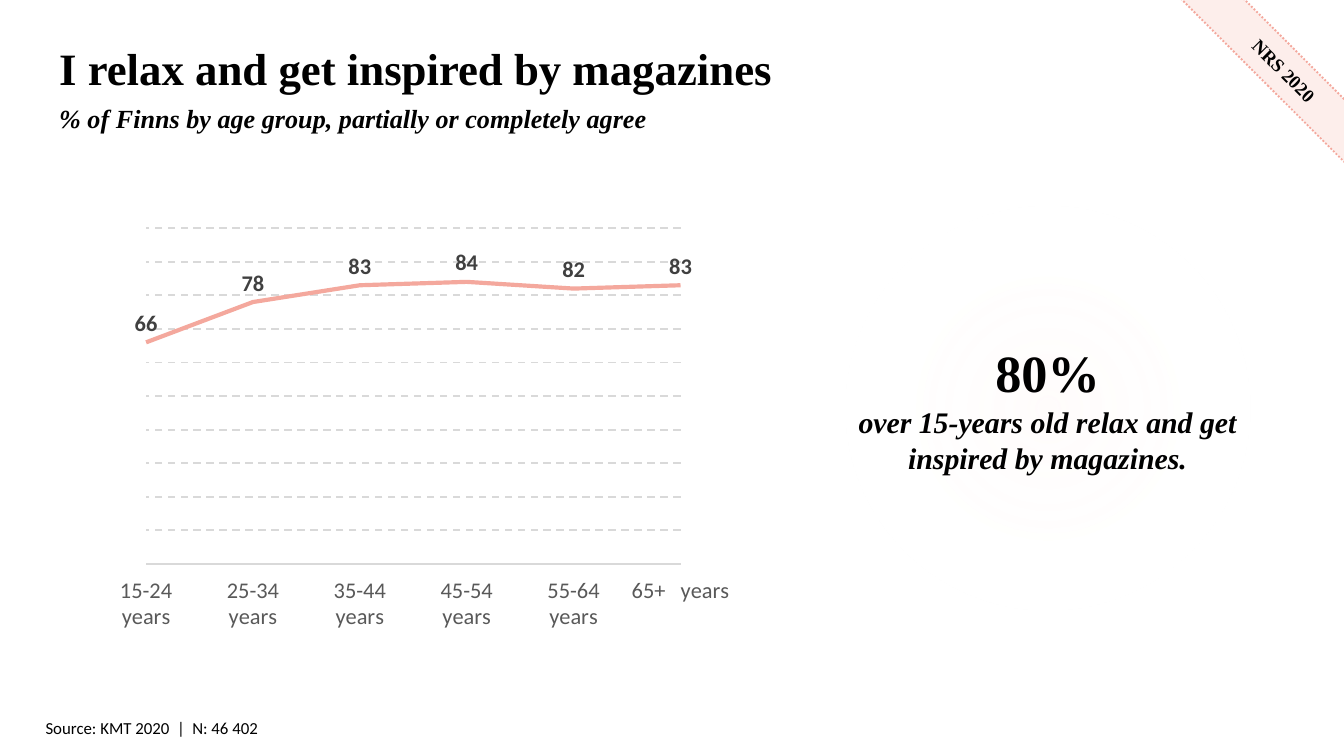
from dataclasses import dataclass

from lxml import etree
from pptx import Presentation
from pptx.chart.data import CategoryChartData
from pptx.dml.color import RGBColor
from pptx.enum.chart import XL_CHART_TYPE, XL_LABEL_POSITION, XL_TICK_LABEL_POSITION, XL_TICK_MARK
from pptx.enum.dml import MSO_LINE
from pptx.enum.shapes import MSO_SHAPE
from pptx.enum.text import MSO_ANCHOR, MSO_AUTO_SIZE, PP_ALIGN
from pptx.oxml import parse_xml
from pptx.oxml.ns import nsdecls, qn
from pptx.util import Inches, Pt

LINE_CHART = XL_CHART_TYPE.LINE
ABOVE = XL_LABEL_POSITION.ABOVE
LOW = XL_TICK_LABEL_POSITION.LOW
NO_TICK = XL_TICK_MARK.NONE
DASH, DOTTED = MSO_LINE.DASH, MSO_LINE.ROUND_DOT
RECTANGLE = MSO_SHAPE.RECTANGLE
TOP, MIDDLE = MSO_ANCHOR.TOP, MSO_ANCHOR.MIDDLE
LEFT, CENTER = PP_ALIGN.LEFT, PP_ALIGN.CENTER
FIXED_SIZE = MSO_AUTO_SIZE.NONE


@dataclass(frozen=True)
class Theme:
    serif: str = "Times New Roman"
    sans: str = "Calibri"
    text: str = "000000"
    accent: str = "F4A89D"
    ribbon: str = "FDEEEB"
    glow: str = "FEF6F4"
    white: str = "FFFFFF"
    grid: str = "D9D9D9"
    axis_text: str = "595959"
    label_text: str = "404040"
    title_size: int = 24
    subtitle_size: int = 14
    figure_size: int = 28
    statement_size: int = 16
    chart_size: int = 10
    label_size: int = 12
    ribbon_size: int = 10
    source_size: int = 9


@dataclass(frozen=True)
class Box:
    left: float
    top: float
    width: float
    height: float

    def lengths(self):
        return tuple(Inches(value) for value in (self.left, self.top, self.width, self.height))


THEME = Theme()
TITLE_BOX = Box(0.34, 0.29, 8.53, 0.42)
SUBTITLE_BOX = Box(0.34, 0.71, 9.32, 0.33)
CHART_BOX = Box(0.45, 1.33, 5.06, 3.41)
STATEMENT_BOX = Box(6.16, 1.33, 3.27, 3.41)
RIBBON_BOX = Box(8.43, 0.36, 2.25, 0.33)
SOURCE_BOX = Box(0.24, 5.29, 6.98, 0.29)

AGREEMENT = {
    "15-24 years": 66,
    "25-34 years": 78,
    "35-44 years": 83,
    "45-54 years": 84,
    "55-64 years": 82,
    "65+   years": 83,
}
PLOT_AREA = {"x": 0.126, "y": 0.108, "w": 0.786, "h": 0.733}


def set_font(font, name: str, size: int, color: str = THEME.text,
             bold: bool = False, italic: bool = False) -> None:
    font.name = name
    font.size = Pt(size)
    font.color.rgb = RGBColor.from_string(color)
    font.bold = bold
    font.italic = italic


def set_line(line, color: str, width: float, dash=None) -> None:
    line.color.rgb = RGBColor.from_string(color)
    line.width = Pt(width)
    if dash is not None:
        line.dash_style = dash


def place(shape, box: Box) -> None:
    shape.left, shape.top, shape.width, shape.height = box.lengths()


def write(shape, text: str, anchor, alignment):
    """Fill a shape with one paragraph and return that paragraph."""
    frame = shape.text_frame
    frame.word_wrap = True
    frame.auto_size = FIXED_SIZE
    frame.vertical_anchor = anchor
    paragraph = frame.paragraphs[0]
    paragraph.text = text
    paragraph.alignment = alignment
    return paragraph


def add_headings(slide) -> None:
    title = slide.shapes.title
    place(title, TITLE_BOX)
    paragraph = write(title, "I relax and get inspired by magazines", MIDDLE, LEFT)
    set_font(paragraph.font, THEME.serif, THEME.title_size, bold=True)

    subtitle = slide.placeholders[1]
    place(subtitle, SUBTITLE_BOX)
    paragraph = write(subtitle, "% of Finns by age group, partially or completely agree", TOP, LEFT)
    paragraph.space_before = Pt(0)
    properties = paragraph._p.get_or_add_pPr()
    properties.set("marL", "0")
    properties.set("indent", "0")
    etree.SubElement(properties, qn("a:buNone"))
    set_font(paragraph.font, THEME.serif, THEME.subtitle_size, bold=True, italic=True)


def add_source(slide) -> None:
    source = slide.shapes.add_textbox(*SOURCE_BOX.lengths())
    paragraph = write(source, "Source: KMT 2020  |  N: 46 402", TOP, LEFT)
    set_font(paragraph.font, THEME.sans, THEME.source_size)


def add_ribbon(slide) -> None:
    ribbon = slide.shapes.add_shape(RECTANGLE, *RIBBON_BOX.lengths())
    ribbon.shadow.inherit = False
    ribbon.rotation = 45
    ribbon.fill.solid()
    ribbon.fill.fore_color.rgb = RGBColor.from_string(THEME.ribbon)
    set_line(ribbon.line, THEME.accent, 1, DOTTED)
    paragraph = write(ribbon, "NRS 2020", MIDDLE, CENTER)
    set_font(paragraph.font, THEME.serif, THEME.ribbon_size, bold=True)


def set_radial_glow(shape) -> None:
    """Fade the fill from a tinted centre to nothing."""
    shape.fill.background()
    gradient = parse_xml(
        f'<a:gradFill {nsdecls("a")} rotWithShape="1"><a:gsLst>'
        f'<a:gs pos="0"><a:srgbClr val="{THEME.glow}"><a:alpha val="33000"/></a:srgbClr></a:gs>'
        f'<a:gs pos="64000"><a:srgbClr val="{THEME.white}"><a:alpha val="0"/></a:srgbClr></a:gs>'
        '</a:gsLst><a:path path="circle">'
        '<a:fillToRect l="50000" t="50000" r="50000" b="50000"/></a:path></a:gradFill>')
    properties = shape._element.spPr
    properties.replace(properties.find(qn("a:noFill")), gradient)


def add_statement(slide) -> None:
    statement = slide.shapes.add_shape(RECTANGLE, *STATEMENT_BOX.lengths())
    statement.shadow.inherit = False
    set_radial_glow(statement)
    statement.line.fill.background()
    paragraph = write(statement, "", MIDDLE, CENTER)
    figure = paragraph.add_run()
    figure.text = "80%"
    set_font(figure.font, THEME.serif, THEME.figure_size, bold=True)
    paragraph.add_line_break()
    claim = paragraph.add_run()
    claim.text = "over 15-years old relax and get inspired by magazines."
    set_font(claim.font, THEME.serif, THEME.statement_size, bold=True, italic=True)


def set_chart_frame(chart) -> None:
    """Fix the inner plot area, start the line on the axis and tint the background."""
    plot_area = chart._chartSpace.chart.plotArea
    layout = plot_area.find(qn("c:layout"))
    if layout is None:
        layout = etree.Element(qn("c:layout"))
        plot_area.insert(0, layout)
    manual = etree.SubElement(layout, qn("c:manualLayout"))
    settings = {"layoutTarget": "inner", "xMode": "edge", "yMode": "edge", **PLOT_AREA}
    for name, value in settings.items():
        etree.SubElement(manual, qn(f"c:{name}")).set("val", str(value))

    value_axis = chart.value_axis._element
    cross = value_axis.find(qn("c:crossBetween"))
    if cross is None:
        cross = etree.Element(qn("c:crossBetween"))
        value_axis.find(qn("c:crosses")).addnext(cross)
    cross.set("val", "midCat")

    chart._chartSpace.chart.addnext(parse_xml(
        f'<c:spPr {nsdecls("c", "a")}><a:solidFill><a:srgbClr val="{THEME.white}">'
        '<a:alpha val="88000"/></a:srgbClr></a:solidFill><a:ln><a:noFill/></a:ln></c:spPr>'))


def add_agreement_chart(slide) -> None:
    data = CategoryChartData()
    data.categories = list(AGREEMENT)
    data.add_series("Series 1", list(AGREEMENT.values()))
    chart = slide.shapes.add_chart(LINE_CHART, *CHART_BOX.lengths(), data).chart
    chart.has_legend = False
    chart.has_title = False
    set_font(chart.font, THEME.sans, THEME.chart_size)

    ages = chart.category_axis
    ages.tick_label_position = LOW
    ages.major_tick_mark = NO_TICK
    set_font(ages.tick_labels.font, THEME.sans, THEME.label_size, THEME.axis_text)
    set_line(ages.format.line, THEME.grid, 0.75)

    shares = chart.value_axis
    shares.minimum_scale, shares.maximum_scale, shares.major_unit = 0, 100, 10
    set_line(shares.major_gridlines.format.line, THEME.grid, 1, DASH)
    shares.visible = False

    plot = chart.plots[0]
    plot.vary_by_categories = False
    series = plot.series[0]
    series.smooth = False
    set_line(series.format.line, THEME.accent, 2.25)
    labels = series.data_labels
    labels.show_value = True
    labels.position = ABOVE
    set_font(labels.font, THEME.sans, THEME.label_size, THEME.label_text, bold=True)
    set_chart_frame(chart)


def main() -> None:
    presentation = Presentation()
    presentation.slide_width = Inches(10)
    presentation.slide_height = presentation.slide_width * 9 // 16
    slide = presentation.slides.add_slide(presentation.slide_layouts[1])
    add_source(slide)
    add_ribbon(slide)
    add_statement(slide)
    add_agreement_chart(slide)
    add_headings(slide)
    presentation.save("out.pptx")


if __name__ == "__main__":
    main()
